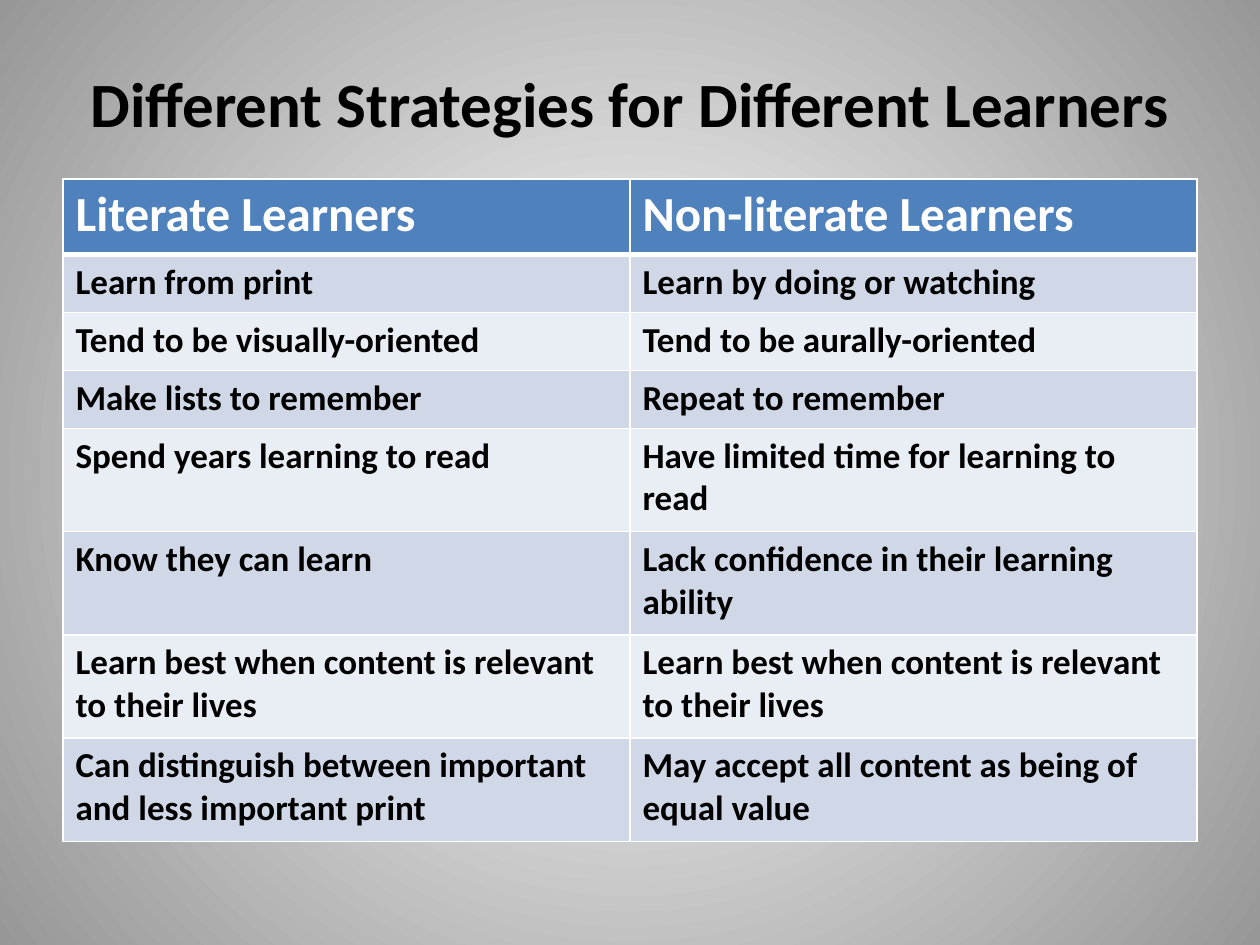
"""Build a slide comparing strategies of literate and non-literate learners."""
from lxml import etree
from pptx import Presentation, util as u
from pptx.dml.color import RGBColor
from pptx.enum import text
from pptx.oxml.ns import qn

TITLE = "Different Strategies for Different Learners"
ROWS = [
    ("Literate Learners", "Non-literate Learners"),
    ("Learn from print", "Learn by doing or watching"),
    ("Tend to be visually-oriented", "Tend to be aurally-oriented"),
    ("Make lists to remember", "Repeat to remember"),
    ("Spend years learning to read", "Have limited time for learning to read"),
    ("Know they can learn", "Lack confidence in their learning ability"),
    ("Learn best when content is relevant to their lives",
     "Learn best when content is relevant to their lives"),
    ("Can distinguish between important and less important print",
     "May accept all content as being of equal value"),
]
HEIGHTS = [0.6] + [0.46] * 3 + [0.82] * 4
COLORS = {"white": "FFFFFF", "edge": "979797", "ink": "000000",
          "header": "4F81BD", "odd": "D0D8E8", "even": "E9EDF4"}
FONT = "Calibri"
LEFT, WIDTH = 0.5, 9


def rgb(name):
    return RGBColor.from_string(COLORS[name])


def add_run(tf, content, size, color):
    r = tf.paragraphs[0].add_run()
    r.text = content
    r.font.name = FONT
    r.font.size = u.Pt(size)
    r.font.bold = True
    r.font.color.rgb = rgb(color)


def radial_background(s):
    fill = s.background.fill
    fill.gradient()
    for stop, name in zip(fill.gradient_stops, ("white", "edge")):
        stop.color.rgb = rgb(name)
    grad = next(s.element.iter(qn("a:gradFill")))
    grad.remove(grad.find(qn("a:lin")))
    circle = etree.SubElement(grad, qn("a:path"), {"path": "circle"})
    etree.SubElement(circle, qn("a:fillToRect"), dict.fromkeys("ltrb", "50000"))


def set_borders(cell, widths):
    tc_pr = cell._tc.get_or_add_tcPr()
    for i, (side, width) in enumerate(widths.items()):
        ln = etree.Element(qn(f"a:ln{side}"), {"w": str(u.Pt(width))})
        solid = etree.SubElement(ln, qn("a:solidFill"))
        etree.SubElement(solid, qn("a:srgbClr"), {"val": COLORS["white"]})
        tc_pr.insert(i, ln)


def add_title(s):
    sp = s.shapes.add_textbox(u.Inches(LEFT), u.Inches(0.3), u.Inches(WIDTH), u.Inches(1.03))
    tf = sp.text_frame
    tf.word_wrap = True
    tf.vertical_anchor = text.MSO_ANCHOR.MIDDLE
    tf.paragraphs[0].alignment = text.PP_ALIGN.CENTER
    add_run(tf, TITLE, 36, "ink")


def add_comparison(s):
    table = s.shapes.add_table(len(ROWS), len(ROWS[0]), u.Inches(LEFT), u.Inches(1.42),
                               u.Inches(WIDTH), u.Inches(sum(HEIGHTS))).table
    for i, (row, height) in enumerate(zip(ROWS, HEIGHTS)):
        table.rows[i].height = u.Inches(height)
        band = "header" if i == 0 else "odd" if i % 2 else "even"
        size, color = (28, "white") if i == 0 else (20, "ink")
        for j, content in enumerate(row):
            cell = table.cell(i, j)
            cell.fill.solid()
            cell.fill.fore_color.rgb = rgb(band)
            set_borders(cell, {"L": 1, "R": 1, "T": 3 if i == 1 else 1, "B": 3 if i == 0 else 1})
            add_run(cell.text_frame, content, size, color)


def main():
    prs = Presentation()
    prs.slide_width, prs.slide_height = u.Inches(10), u.Inches(7.5)
    s = prs.slides.add_slide(prs.slide_layouts[6])
    radial_background(s)
    add_title(s)
    add_comparison(s)
    prs.save("out.pptx")


if __name__ == "__main__":
    main()
